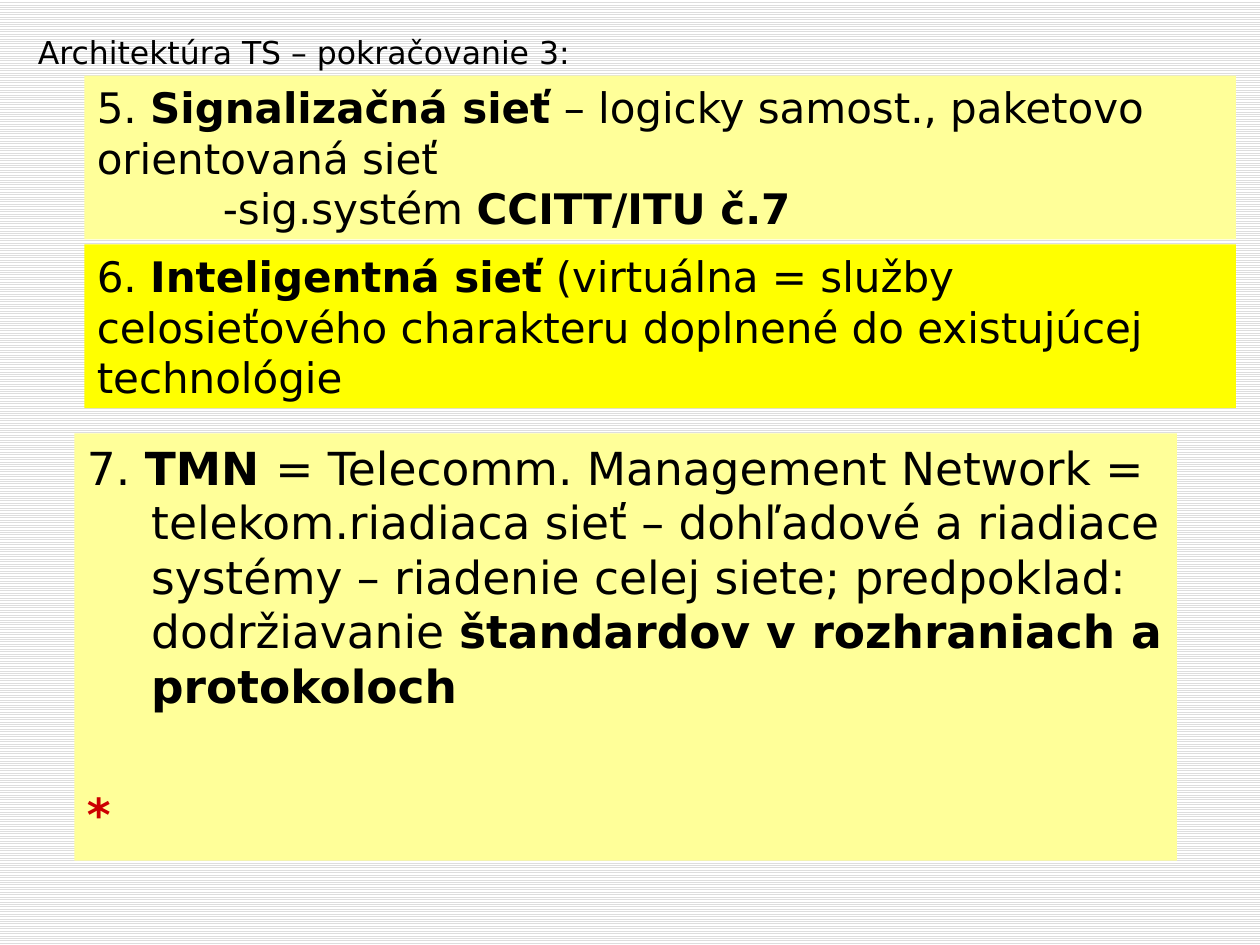
"""Build the slide on signalling, intelligent and management networks."""
from pptx import Presentation
from pptx.dml.color import RGBColor
from pptx.enum.dml import MSO_PATTERN
from pptx.enum.shapes import MSO_SHAPE
from pptx.enum.text import MSO_ANCHOR, MSO_AUTO_SIZE, PP_ALIGN
from pptx.oxml.xmlchemy import OxmlElement
from pptx.util import Inches, Pt

STRIPES = MSO_PATTERN.LIGHT_HORIZONTAL
RECTANGLE = MSO_SHAPE.RECTANGLE
TOP = MSO_ANCHOR.TOP
FIXED = MSO_AUTO_SIZE.NONE
LEFT = PP_ALIGN.LEFT

BLACK = RGBColor(0x00, 0x00, 0x00)
WHITE = RGBColor(0xFF, 0xFF, 0xFF)
STRIPE_GREY = RGBColor(0xDD, 0xDD, 0xDD)
PALE_YELLOW = RGBColor(0xFF, 0xFF, 0x99)
YELLOW = RGBColor(0xFF, 0xFF, 0x00)
RED = RGBColor(0xCC, 0x00, 0x00)


class NetworkSlide:
    """Hold the text style and the slide being filled."""

    font_name = "DejaVu Sans"

    def __init__(self, deck):
        self.slide = deck.slides.add_slide(deck.slide_layouts[1])

    def background(self):
        fill = self.slide.background.fill
        fill.patterned()
        fill.pattern = STRIPES
        fill.fore_color.rgb = STRIPE_GREY
        fill.back_color.rgb = WHITE

    def place(self, shape, box, fill=None):
        shape.left, shape.top, shape.width, shape.height = map(Inches, box)
        if fill is not None:
            shape.fill.solid()
            shape.fill.fore_color.rgb = fill
        frame = shape.text_frame
        frame.word_wrap = True
        frame.auto_size = FIXED
        frame.vertical_anchor = TOP
        return frame

    def fill_paragraph(self, paragraph, runs, size, color=BLACK, margin=0, indent=0):
        paragraph.alignment = LEFT
        paragraph.font.name = self.font_name
        paragraph.font.size = Pt(size)
        paragraph.font.color.rgb = color
        for text, bold in runs:
            run = paragraph.add_run()
            run.text = text
            run.font.bold = bold
        properties = paragraph._p.get_or_add_pPr()
        properties.set("marL", str(Inches(margin)))
        properties.set("indent", str(Inches(indent)))
        properties.insert_element_before(OxmlElement("a:buNone"), "a:tabLst", "a:defRPr", "a:extLst")

    def title(self, text, box):
        frame = self.place(self.slide.shapes.title, box)
        self.fill_paragraph(frame.paragraphs[0], [(text, False)], 18)

    def body(self, runs, mark, box):
        frame = self.place(self.slide.placeholders[1], box, PALE_YELLOW)
        hanging = {"margin": 0.51, "indent": -0.51}
        self.fill_paragraph(frame.paragraphs[0], runs, 26, **hanging)
        closing = frame.add_paragraph()
        closing.space_before = Pt(42)
        self.fill_paragraph(closing, [(mark, True)], 26, RED, **hanging)

    def panel(self, runs, box, fill, detail=None):
        shape = self.slide.shapes.add_shape(RECTANGLE, *map(Inches, box))
        shape.shadow.inherit = False
        shape.line.fill.background()
        frame = self.place(shape, box, fill)
        self.fill_paragraph(frame.paragraphs[0], runs, 24)
        if detail:
            self.fill_paragraph(frame.add_paragraph(), detail, 24, indent=1)


def main():
    deck = Presentation()
    deck.slide_width, deck.slide_height = Inches(10), Inches(7.5)
    page = NetworkSlide(deck)
    page.background()
    page.title("Architektúra TS – pokračovanie 3:", (0.2, 0.21, 7.48, 0.4))
    page.body(
        [
            ("7. ", False),
            ("TMN ", True),
            ("= Telecomm. Management Network = telekom.riadiaca sieť – dohľadové a riadiace "
             "systémy – riadenie celej siete; predpoklad: dodržiavanie ", False),
            ("štandardov v rozhraniach a protokoloch", True),
        ],
        "*",
        (0.59, 3.44, 8.75, 3.39),
    )
    page.panel(
        [
            ("5. ", False),
            ("Signalizačná sieť", True),
            (" – logicky samost., paketovo orientovaná sieť", False),
        ],
        (0.67, 0.6, 9.14, 1.3),
        PALE_YELLOW,
        detail=[("-sig.systém ", False), ("CCITT/ITU č.7", True)],
    )
    page.panel(
        [
            ("6. ", False),
            ("Inteligentná sieť", True),
            (" (virtuálna = služby celosieťového charakteru doplnené do existujúcej technológie", False),
        ],
        (0.67, 1.94, 9.14, 1.3),
        YELLOW,
    )
    deck.save("out.pptx")


if __name__ == "__main__":
    main()
